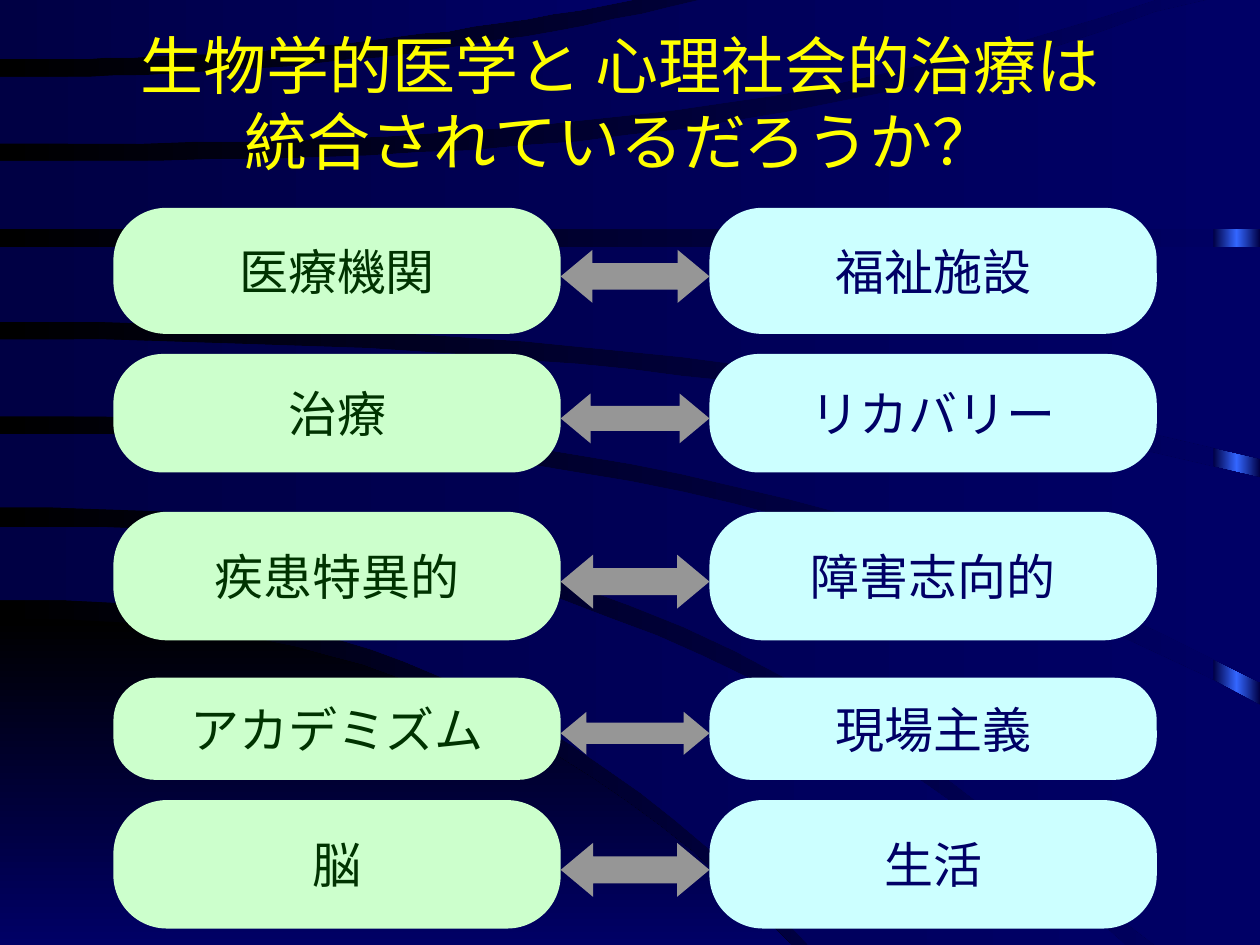
"""Build a slide that sets medical terms against psychosocial ones, row by row."""
from copy import deepcopy
from typing import NamedTuple

from pptx import Presentation
from pptx.dml.color import RGBColor as RGB
from pptx.enum.shapes import MSO_SHAPE as Kind
from pptx.enum.text import MSO_ANCHOR as Anchor, PP_ALIGN as Align
from pptx.oxml.ns import qn
from pptx.util import Pt

BLACK = RGB(0x00, 0x00, 0x00)
DARK = RGB(0x00, 0x00, 0x44)
NAVY = RGB(0x00, 0x00, 0x66)
BLUE = RGB(0x33, 0x66, 0xFF)
YELLOW = RGB(0xFF, 0xFF, 0x00)
MINT = RGB(0xCC, 0xFF, 0xCC)
GREEN = RGB(0x00, 0x33, 0x00)
AQUA = RGB(0xCC, 0xFF, 0xFF)
GREY = RGB(0x96, 0x96, 0x96)
FONT = "Times New Roman"
WIDE, HIGH = 720, 540
LEFT, RIGHT, BOX = 64.8, 405.4, 255.6
STEPS = 24


class Row(NamedTuple):
    top: float
    high: float
    left: str
    right: str


class Edge(NamedTuple):
    start: float
    reach: float
    end: float
    power: float = 1


class Band(NamedTuple):
    upper: Edge
    lower: Edge
    first: RGB = DARK
    angle: int = 0


ROWS = [
    Row(118.8, 72, "医療機関", "福祉施設"),
    Row(202.3, 67.7, "治療", "リカバリー"),
    Row(292.5, 73.4, "疾患特異的", "障害志向的"),
    Row(387.3, 58.4, "アカデミズム", "現場主義"),
    Row(457.2, 73.4, "脳", "生活"),
]

BANDS = [
    Band(Edge(354, 452, HIGH, 2.5), Edge(HIGH, 452, HIGH), BLACK, 270),
    Band(Edge(301, 643, HIGH, 2.5), Edge(343, 462, HIGH, 2.5)),
    Band(Edge(248, WIDE, 403, 2.5), Edge(290, WIDE, 607, 2.5)),
    Band(Edge(194, WIDE, 273, 2.2), Edge(238, WIDE, 390, 2.5)),
    Band(Edge(141, WIDE, 141), Edge(184, WIDE, 262, 2.2)),
    Band(Edge(92, WIDE, -17, 2.9), Edge(131, WIDE, 131)),
    Band(Edge(44, 400, 0, 2.2), Edge(82, 660, 0, 2.7)),
    Band(Edge(0, 361, 0), Edge(34, 361, 0, 2.1)),
]


def shade(fill, first: RGB, last: RGB, angle: int) -> None:
    fill.gradient()
    fill.gradient_angle = angle
    for stop, tint, place in zip(fill.gradient_stops, (first, last), (0, 1)):
        stop.color.rgb = tint
        stop.position = place


def plain(shape) -> None:
    shape.shadow.inherit = False
    shape.line.fill.background()


def draw_strip(shapes) -> None:
    strip = shapes.add_shape(Kind.RECTANGLE, Pt(693.4), 0, Pt(26.6), Pt(HIGH))
    plain(strip)
    shade(strip.fill, DARK, DARK, 0)
    stops = strip._element.spPr.find(".//" + qn("a:gsLst"))
    stops.insert(1, deepcopy(stops[0]))
    mid = strip.fill.gradient_stops[1]
    mid.color.rgb = BLUE
    mid.position = 0.5


def trace(edge: Edge) -> list[tuple[float, float]]:
    points = []
    for step in range(STEPS + 1):
        part = step / STEPS
        y = edge.start + (edge.end - edge.start) * part ** edge.power
        points.append((edge.reach * part, min(max(y, 0), HIGH)))
    return points


def draw_band(shapes, band: Band) -> None:
    points = trace(band.upper) + trace(band.lower)[::-1]
    pen = shapes.build_freeform(*points[0], scale=Pt(1))
    pen.add_line_segments(points[1:], close=True)
    shape = pen.convert_to_shape()
    plain(shape)
    shade(shape.fill, band.first, NAVY, band.angle)


def write(frame, lines: list[str], size: int, tint: RGB) -> None:
    frame.text = "\n".join(lines)
    for para in frame.paragraphs:
        para.alignment = Align.CENTER
        para.font.name = FONT
        para.font.size = Pt(size)
        para.font.color.rgb = tint


def draw_box(shapes, x: float, row: Row, text: str, back: RGB, ink: RGB) -> None:
    box = shapes.add_shape(Kind.ROUNDED_RECTANGLE, Pt(x), Pt(row.top), Pt(BOX), Pt(row.high))
    plain(box)
    box.adjustments[0] = 0.417
    box.fill.solid()
    box.fill.fore_color.rgb = back
    frame = box.text_frame
    frame.word_wrap = False
    frame.vertical_anchor = Anchor.MIDDLE
    write(frame, [text], 28, ink)


def draw_row(shapes, row: Row) -> None:
    group = shapes.add_group_shape().shapes
    draw_box(group, RIGHT, row, row.right, AQUA, NAVY)
    draw_box(group, LEFT, row, row.left, MINT, GREEN)
    start = LEFT + BOX
    arrow = group.add_shape(Kind.LEFT_RIGHT_ARROW, Pt(start), Pt(row.top + row.high / 3),
                            Pt(RIGHT - start), Pt(row.high * 0.42))
    plain(arrow)
    arrow.adjustments[0] = 0.5
    arrow.adjustments[1] = 0.6
    arrow.fill.solid()
    arrow.fill.fore_color.rgb = GREY


def draw_title(shapes) -> None:
    frame = shapes.add_textbox(Pt(31), Pt(20.2), Pt(646.6), Pt(85)).text_frame
    frame.word_wrap = True
    frame.vertical_anchor = Anchor.BOTTOM
    write(frame, ["生物学的医学と 心理社会的治療は", "統合されているだろうか？"], 36, YELLOW)


def main() -> None:
    deck = Presentation()
    deck.slide_width, deck.slide_height = Pt(WIDE), Pt(HIGH)
    slide = deck.slides.add_slide(deck.slide_layouts[6])
    shade(slide.background.fill, BLACK, NAVY, 0)
    shapes = slide.shapes
    draw_strip(shapes)
    for band in BANDS:
        draw_band(shapes, band)
    draw_title(shapes)
    for row in ROWS:
        draw_row(shapes, row)
    deck.save("out.pptx")


if __name__ == "__main__":
    main()
